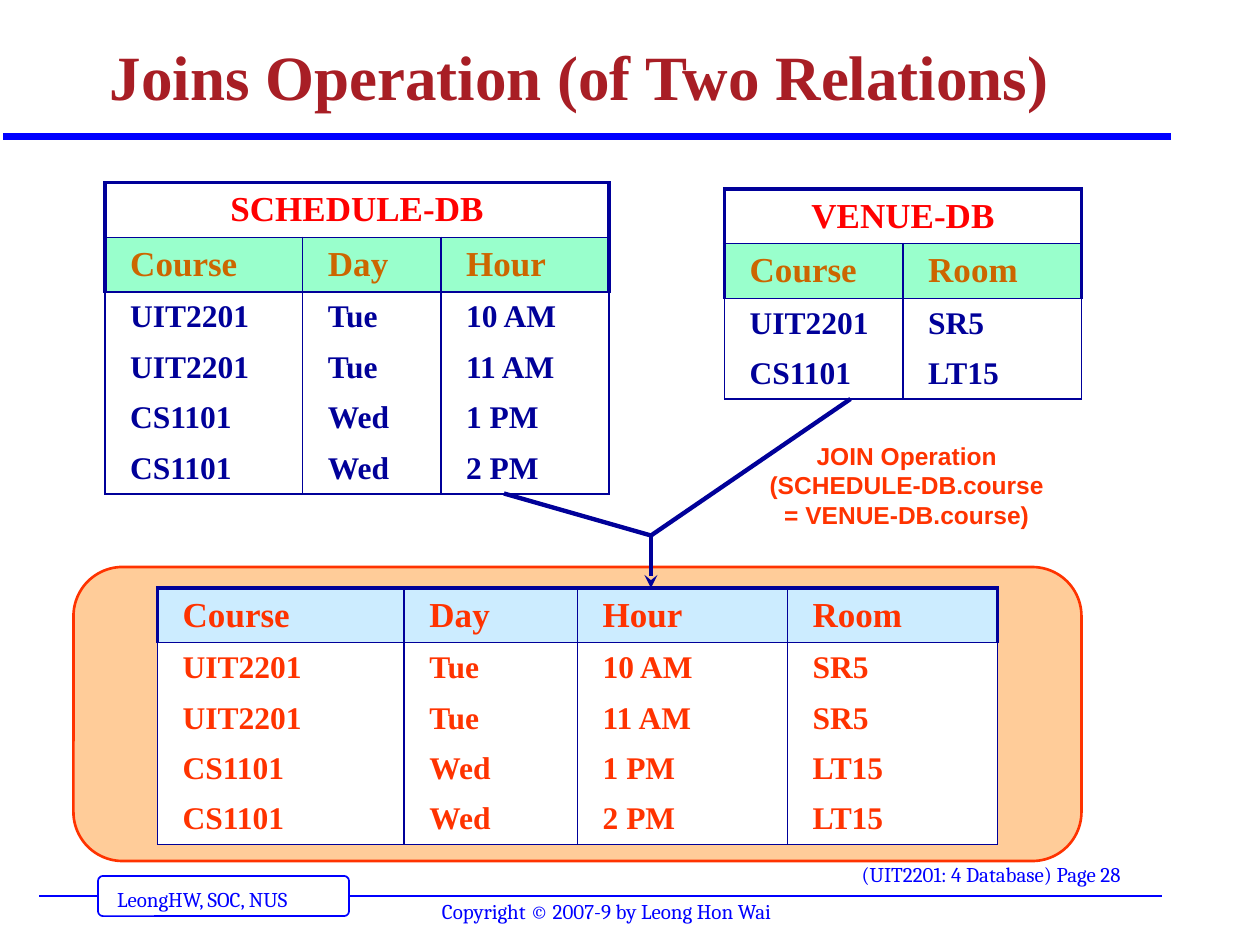
from lxml import etree
from pptx import Presentation
from pptx.dml.color import RGBColor
from pptx.enum import shapes, text
from pptx.oxml import ns
from pptx.util import Pt

HUES = {
    "blue": "0000FF", "navy": "000099", "title": "A81E25", "red": "FF0000",
    "flame": "FF3300", "brown": "CC6600", "mint": "99FFCC", "sky": "CCECFF",
    "peach": "FFCC99", "white": "FFFFFF",
}
SERIF, SANS, FOOT = "Times New Roman", "Arial", "Cambria"
MID, LEFT = text.PP_ALIGN.CENTER, text.PP_ALIGN.LEFT


def hue(name):
    return RGBColor.from_string(HUES[name])


def write(frame, words, size=18, font=SERIF, color="navy", bold=True,
          align=LEFT, lead=None):
    """Fill a text frame, one paragraph for each line of words."""
    for i, line in enumerate(words.split("\n")):
        para = frame.paragraphs[0] if i == 0 else frame.add_paragraph()
        para.alignment = align
        if lead:
            para.line_spacing = lead
        run = para.add_run()
        run.text = line
        run.font.size, run.font.name, run.font.bold = Pt(size), font, bold
        run.font.color.rgb = hue(color)


class Deck:
    def __init__(self, wide, high):
        self.prs = Presentation()
        self.prs.slide_width, self.prs.slide_height = Pt(wide), Pt(high)
        self.slide = self.prs.slides.add_slide(self.prs.slide_layouts[5])
        self.items = self.slide.shapes

    def title(self, words, box):
        item = self.items.title
        item.left, item.top, item.width, item.height = map(Pt, box)
        frame = item.text_frame
        frame.vertical_anchor = text.MSO_ANCHOR.BOTTOM
        frame.auto_size = text.MSO_AUTO_SIZE.NONE
        write(frame, words, size=36, color="title", lead=0.9)

    def label(self, words, box, pad=7.2, wrap=False, **style):
        frame = self.items.add_textbox(*map(Pt, box)).text_frame
        frame.word_wrap = wrap
        frame.margin_left = frame.margin_right = Pt(pad)
        write(frame, words, **style)

    def panel(self, box, fill, edge, width, curve):
        kind = shapes.MSO_SHAPE.ROUNDED_RECTANGLE
        item = self.items.add_shape(kind, *map(Pt, box))
        item.shadow.inherit = False
        item.adjustments[0] = curve
        item.fill.solid()
        item.fill.fore_color.rgb = hue(fill)
        item.line.color.rgb = hue(edge)
        item.line.width = Pt(width)

    def line(self, start, end, color, width, arrow=False):
        item = self.items.add_connector(
            shapes.MSO_CONNECTOR.STRAIGHT, *map(Pt, start + end))
        item.line.color.rgb = hue(color)
        item.line.width = Pt(width)
        props = item._element.spPr
        if arrow:
            etree.SubElement(item.line._get_or_add_ln(),
                             ns.qn("a:tailEnd"), type="stealth")
        etree.SubElement(props, ns.qn("a:effectLst"))

    def border(self, cell, widths):
        """Draw the sides L, R, T, B; a width of 0 hides the side."""
        props = cell._tc.get_or_add_tcPr()
        for side, width in zip("LRTB", widths):
            edge = etree.SubElement(props, ns.qn("a:ln" + side),
                                    w=str(int(Pt(width))))
            if width:
                fill = etree.SubElement(edge, ns.qn("a:solidFill"))
                etree.SubElement(fill, ns.qn("a:srgbClr"), val=HUES["navy"])
            else:
                etree.SubElement(edge, ns.qn("a:noFill"))

    def table(self, spot, cols, rows, high, head, body, name=None, fill=None):
        """head is (fill, text colour); high is (head row, body row)."""
        top = 2 if name else 1
        if name:
            rows = [[name] + [""] * (len(cols) - 1)] + rows
        tall = [high[0]] * top + [high[1]] * (len(rows) - top)
        size = (sum(cols), sum(tall))
        grid = self.items.add_table(
            len(rows), len(cols), *map(Pt, spot + size)).table
        grid.first_row = grid.horz_banding = False
        for col, width in zip(grid.columns, cols):
            col.width = Pt(width)
        for row, height in zip(grid.rows, tall):
            row.height = Pt(height)
        if name:
            grid.cell(0, 0).merge(grid.cell(0, len(cols) - 1))

        for r, row in enumerate(rows):
            named, heading = bool(name) and r == 0, r < top
            outer = 2.25 if heading else 1
            above = 2.25 if r == 0 else int(r <= top)
            below = int(r < top or r == len(rows) - 1)
            for c, words in enumerate(row):
                cell = grid.cell(r, c)
                cell.margin_left = cell.margin_right = Pt(14.4)
                cell.vertical_anchor = text.MSO_ANCHOR.MIDDLE
                first, last = c == 0, c == len(cols) - 1
                inner = 0 if named else 1
                self.border(cell, (outer if first or named else inner,
                                   outer if last or named else inner,
                                   above, below))
                paint = head[0] if heading and not named else fill
                if paint:
                    cell.fill.solid()
                    cell.fill.fore_color.rgb = hue(paint)
                else:
                    cell.fill.background()
                if words:
                    tint = "red" if named else head[1] if heading else body
                    write(cell.text_frame, words, color=tint,
                          size=20 if heading else 18,
                          align=MID if named else LEFT)


def main():
    deck = Deck(720, 540)

    # Rules and footer
    deck.line((22.5, 512), (664, 512), "blue", 1)
    deck.panel((56, 500.5, 143.5, 23), "white", "blue", 1, 0.125)
    deck.line((2, 78), (669, 78), "blue", 4)
    for words, box in (
        ("LeongHW, SOC, NUS", (59.8, 503.3, 131, 21.6)),
        ("(UIT2201: 4 Database) Page 28", (485.3, 488.9, 179.3, 21.6)),
        ("Copyright © 2007-9 by Leong Hon Wai", (245.5, 509.8, 221, 21.6)),
    ):
        deck.label(words, box, size=12, font=FOOT, color="blue", bold=False)

    # Result panel and title
    deck.panel((42, 324, 576, 168), "peach", "flame", 1.5, 0.167)
    deck.title("Joins Operation (of Two Relations)", (55.5, 6, 612, 63))

    # The two relations and their join
    plan = [["Course", "Day", "Hour"],
            ["UIT2201", "Tue", "10 AM"], ["UIT2201", "Tue", "11 AM"],
            ["CS1101", "Wed", "1 PM"], ["CS1101", "Wed", "2 PM"]]
    rooms = [["Course", "Room"], ["UIT2201", "SR5"], ["CS1101", "LT15"]]
    find = dict(rooms)
    joined = [row + [find[row[0]]] for row in plan]
    deck.table((60, 104.4), (113, 79, 96), plan, (29.7, 28.2),
               ("mint", "brown"), "navy", name="SCHEDULE-DB")
    deck.table((414, 108), (102, 102), rooms, (29.3, 27.5),
               ("mint", "brown"), "navy", name="VENUE-DB")
    deck.table((90, 336), (141, 99, 120, 120), joined, (29.2, 27.3),
               ("sky", "flame"), "flame", fill="white")

    # Join arrow and its label
    joint = (372, 306)
    deck.line((486, 228), joint, "navy", 2.5)
    deck.line((288, 282), joint, "navy", 2.5)
    deck.line(joint, (372, 336), "navy", 2.5, arrow=True)
    deck.label("JOIN Operation\n(SCHEDULE-DB.course\n= VENUE-DB.course)",
               (408, 248.4, 220.3, 57.6), pad=14.4, wrap=True, size=14,
               font=SANS, color="flame", align=MID)

    deck.prs.save("out.pptx")


if __name__ == "__main__":
    main()
